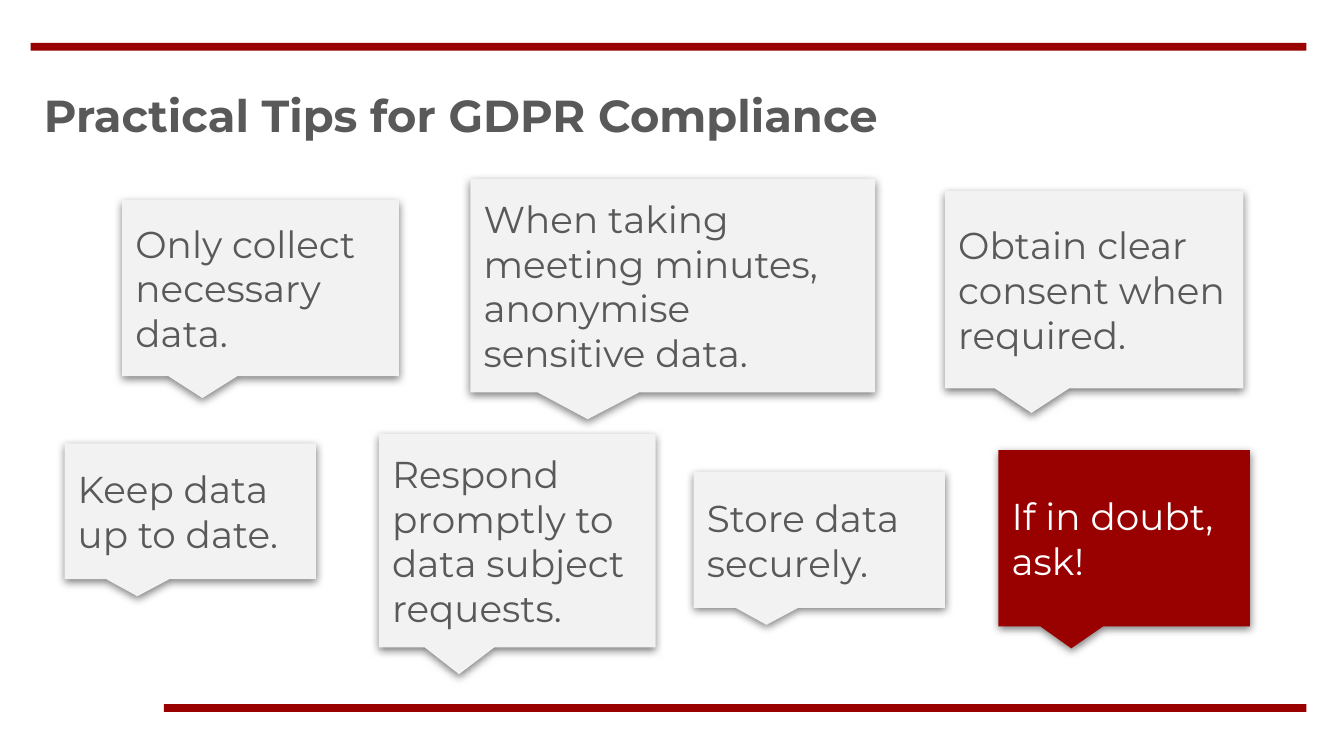
from dataclasses import dataclass

from lxml import etree
from pptx import Presentation
from pptx import util as u
from pptx.dml.color import RGBColor
from pptx.enum import shapes, text
from pptx.oxml.ns import qn

COLORS = {
    "red": "990000",
    "grey": "F2F2F2",
    "text": "595959",
    "white": "FFFFFF",
    "shadow": "000000",
}
FONT = "Montserrat"
INSET = u.Cm(0.25)
RIGHT_EDGE = 24.69
BAR_HEIGHT = 0.15


@dataclass
class Callout:
    words: str
    left: float
    top: float
    width: float
    height: float
    fill: str = "grey"
    color: str = "text"


CALLOUTS = [
    Callout("Only collect necessary data.", 2.31, 3.78, 5.23, 3.33),
    Callout("Obtain clear consent when required.", 17.86, 3.61, 5.64, 3.73),
    Callout("Store data securely.", 13.11, 8.92, 4.75, 2.57),
    Callout("Keep data up to date.", 1.22, 8.38, 4.75, 2.57),
    Callout("Respond promptly to data subject requests.", 7.16, 8.2, 5.23, 4.04),
    Callout("When taking meeting minutes, anonymise sensitive data.",
            8.89, 3.38, 7.65, 4.04),
    Callout("If in doubt, ask!", 18.87, 8.51, 4.75, 3.33, "red", "white"),
]


def rgb(name: str) -> RGBColor:
    return RGBColor.from_string(COLORS[name])


def add_filled(s, kind, left: float, top: float, width: float, height: float,
               fill: str):
    """Add a borderless, shadowless shape; lengths are in centimetres."""
    sp = s.shapes.add_shape(kind, *map(u.Cm, (left, top, width, height)))
    sp.shadow.inherit = False
    sp.fill.solid()
    sp.fill.fore_color.rgb = rgb(fill)
    sp.line.fill.background()
    return sp


def add_bar(s, left: float, top: float) -> None:
    """Add a red rule that runs from left to the common right edge."""
    add_filled(s, shapes.MSO_SHAPE.RECTANGLE, left, top, RIGHT_EDGE - left,
               BAR_HEIGHT, "red")


def set_text(sp, words: str, size: int, color: str, bold: bool = False) -> None:
    tf = sp.text_frame
    tf.word_wrap = True
    tf.margin_left = tf.margin_right = tf.margin_top = tf.margin_bottom = INSET
    p = tf.paragraphs[0]
    p.text = words
    p.alignment = text.PP_ALIGN.LEFT
    p.font.name = FONT
    p.font.size = u.Pt(size)
    p.font.bold = bold
    p.font.color.rgb = rgb(color)


def add_soft_shadow(sp) -> None:
    effects = sp.element.spPr.find(qn("a:effectLst"))
    shadow = etree.SubElement(
        effects, qn("a:outerShdw"), blurRad=str(u.Pt(4.5)), dist=str(u.Pt(1.5)),
        dir="5400000", algn="bl", rotWithShape="0")
    color = etree.SubElement(shadow, qn("a:srgbClr"), val=COLORS["shadow"])
    etree.SubElement(color, qn("a:alpha"), val="50000")


def add_callout(s, c: Callout) -> None:
    sp = add_filled(s, shapes.MSO_SHAPE.RECTANGULAR_CALLOUT, c.left, c.top,
                    c.width, c.height, c.fill)
    sp.adjustments[0], sp.adjustments[1] = -0.21, 0.625
    add_soft_shadow(sp)
    set_text(sp, c.words, 20, c.color)
    sp.text_frame.vertical_anchor = text.MSO_ANCHOR.MIDDLE


def add_title(s, words: str) -> None:
    sp = s.shapes.add_textbox(u.Cm(0.58), u.Cm(1.4), u.Cm(21.59), u.Cm(1.55))
    set_text(sp, words, 24, "text", bold=True)
    sp.text_frame.auto_size = text.MSO_AUTO_SIZE.SHAPE_TO_FIT_TEXT


def main() -> None:
    prs = Presentation()
    prs.slide_width, prs.slide_height = u.Cm(25.4), u.Cm(14.29)
    s = prs.slides.add_slide(prs.slide_layouts[6])
    add_bar(s, 3.1, 13.31)
    add_bar(s, 0.58, 0.81)
    add_title(s, "Practical Tips for GDPR Compliance")
    for c in CALLOUTS:
        add_callout(s, c)
    prs.save("out.pptx")


if __name__ == "__main__":
    main()
